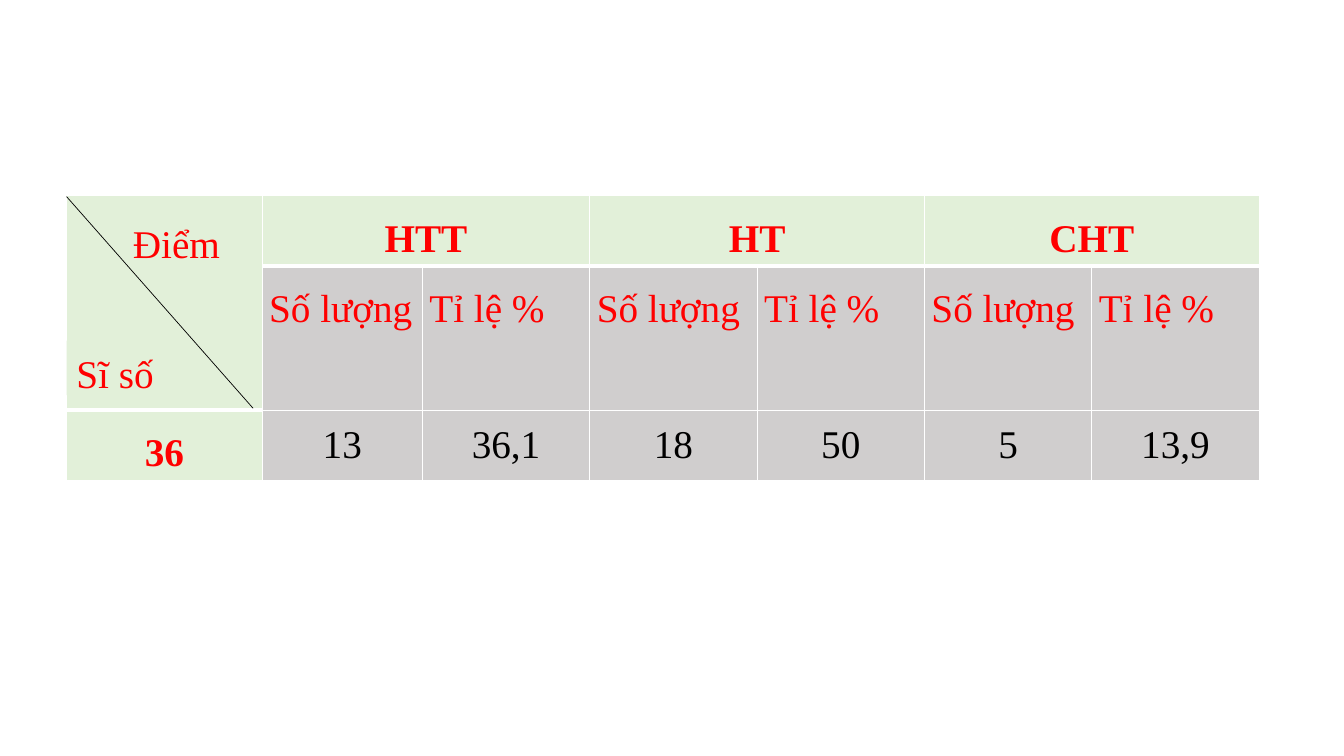
from dataclasses import dataclass

from lxml.etree import SubElement
from pptx import Presentation
from pptx.dml.color import RGBColor as RGB
from pptx.enum.shapes import MSO_CONNECTOR as CONN, MSO_SHAPE as SHAPE
from pptx.enum.text import MSO_ANCHOR as ANCHOR, PP_ALIGN as ALIGN
from pptx.oxml.ns import qn
from pptx.util import Pt

PX = 9144


@dataclass(frozen=True)
class Theme:
    """Colours, font and type size of the slide."""
    font: str = "Times New Roman"
    size: int = 28
    red: str = "FF0000"
    black: str = "000000"
    white: str = "FFFFFF"
    green: str = "E2F0D9"
    grey: str = "D0CECE"


T = Theme()


def px(n):
    """Turn px into EMU."""
    return n * PX


def paint(fill, color):
    """Fill with a solid colour."""
    fill.solid()
    fill.fore_color.rgb = RGB.from_string(color)


def write(tf, text, color=T.red, bold=False, align=ALIGN.LEFT, spacing=1.07, after=8):
    """Write one formatted paragraph."""
    p = tf.paragraphs[0]
    p.text = text
    p.alignment, p.line_spacing = align, spacing
    p.space_before, p.space_after = Pt(0), Pt(after)
    p.font.name, p.font.size, p.font.bold = T.font, Pt(T.size), bold
    p.font.color.rgb = RGB.from_string(color)


def set_borders(cell, bottom):
    """Draw white cell borders, with a chosen bottom width in points."""
    tc_pr = cell._tc.get_or_add_tcPr()
    for i, (side, width) in enumerate(zip("LRTB", (1, 1, 1, bottom))):
        ln = tc_pr.makeelement(qn(f"a:ln{side}"), {"w": str(Pt(width))})
        fill = SubElement(ln, qn("a:solidFill"))
        SubElement(fill, qn("a:srgbClr"), val=T.white)
        tc_pr.insert(i, ln)


def add_grid(s, x, y, cols, rows):
    """Add a table with plain cells of the given sizes."""
    frame = s.shapes.add_table(len(rows), len(cols), px(x), px(y),
                               px(sum(cols)), px(sum(rows)))
    table = frame.table
    for col, width in zip(table.columns, cols):
        col.width = px(width)
    for row, height in zip(table.rows, rows):
        row.height = px(height)
    for r in range(len(rows)):
        for c in range(len(cols)):
            cell = table.cell(r, c)
            cell.margin_left = cell.margin_right = px(7)
            cell.margin_top = cell.margin_bottom = 0
            header = r == 0 or c == 0
            paint(cell.fill, T.green if header else T.grey)
            set_borders(cell, 3 if r == 0 or (r, c) == (1, 0) else 1)
    return table


def fill_grid(table, total, grades):
    """Write the class size and the count and share of each grade."""
    table.cell(0, 0).merge(table.cell(1, 0))
    write(table.cell(2, 0).text_frame, total, bold=True, align=ALIGN.CENTER,
          spacing=1.5, after=0)
    for i, (grade, *values) in enumerate(grades):
        first = 1 + 2 * i
        head = table.cell(0, first)
        head.merge(table.cell(0, first + 1))
        write(head.text_frame, grade, bold=True, align=ALIGN.CENTER,
              spacing=1.5, after=0)
        for c, (label, value) in enumerate(zip(("Số lượng", "Tỉ lệ %"), values), first):
            write(table.cell(1, c).text_frame, label, align=ALIGN.JUSTIFY,
                  spacing=1.5, after=0)
            write(table.cell(2, c).text_frame, value, T.black, align=ALIGN.CENTER,
                  spacing=1.3)


def add_label(s, text, x, y, w, h):
    """Add a filled label inside the corner cell."""
    sp = s.shapes.add_shape(SHAPE.RECTANGLE, px(x), px(y), px(w), px(h))
    sp.shadow.inherit = False
    paint(sp.fill, T.green)
    sp.line.fill.background()
    tf = sp.text_frame
    tf.word_wrap, tf.vertical_anchor = True, ANCHOR.TOP
    write(tf, text)


def add_diagonal(s, x1, y1, x2, y2):
    """Add the thin line that splits the corner cell."""
    line = s.shapes.add_connector(CONN.STRAIGHT, px(x1), px(y1), px(x2), px(y2))
    line.line.width = Pt(0.5)
    line.line.color.rgb = RGB.from_string(T.black)
    SubElement(line._element.spPr, qn("a:effectLst"))


def main():
    """Build the grade table slide."""
    prs = Presentation()
    prs.slide_width, prs.slide_height = px(1333), px(750)
    s = prs.slides.add_slide(prs.slide_layouts[6])
    table = add_grid(s, 66, 194, [194, 159] + [166] * 5, [70, 143, 70])
    fill_grid(table, "36", [("HTT", "13", "36,1"), ("HT", "18", "50"),
                            ("CHT", "5", "13,9")])
    add_label(s, "Điểm", 122, 209, 135, 64)
    add_label(s, "Sĩ số", 66, 338, 149, 54)
    add_diagonal(s, 66, 195, 251, 405)
    prs.save("out.pptx")


if __name__ == "__main__":
    main()
